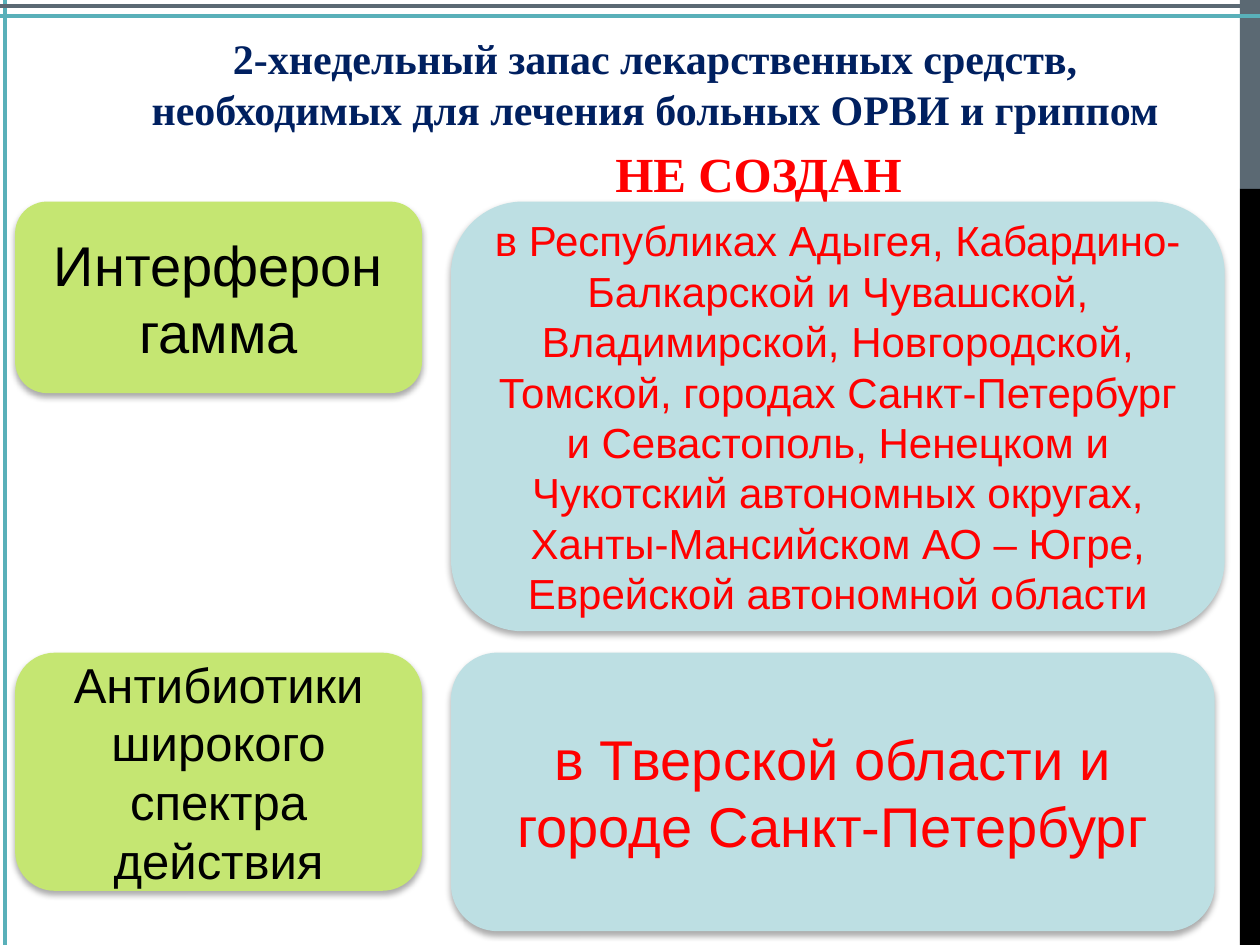
from lxml import etree
from pptx import Presentation
from pptx.dml.color import RGBColor
from pptx.enum.shapes import MSO_CONNECTOR, MSO_SHAPE
from pptx.enum.text import MSO_ANCHOR, MSO_AUTO_SIZE, PP_ALIGN
from pptx.oxml import parse_xml
from pptx.oxml.ns import nsdecls, qn
from pptx.util import Inches, Pt

RECTANGLE, ROUNDED = MSO_SHAPE.RECTANGLE, MSO_SHAPE.ROUNDED_RECTANGLE
STRAIGHT = MSO_CONNECTOR.STRAIGHT
TOP, MIDDLE = MSO_ANCHOR.TOP, MSO_ANCHOR.MIDDLE
CENTER = PP_ALIGN.CENTER
NO_AUTOFIT = MSO_AUTO_SIZE.NONE

WIDTH, HEIGHT = 10, 7.5
TEAL, SLATE, BLACK = "59B0B9", "5B6973", "000000"
GREEN, PALE_BLUE, RED, NAVY = "C5E672", "BDDFE3", "FF0000", "002060"
DRUG_LEFT, DRUG_WIDTH, REGION_LEFT = 0.12, 3.23, 3.58

ROWS = [
    (1.6, ("Интерферон гамма", 32, 1.52),
     ("в Республиках Адыгея, Кабардино-Балкарской и Чувашской, Владимирской, "
      "Новгородской, Томской, городах Санкт-Петербург и Севастополь, Ненецком и "
      "Чукотский автономных округах, Ханты-Мансийском АО – Югре, "
      "Еврейской автономной области", 24, 6.14, 3.41)),
    (5.18, ("Антибиотики широкого спектра действия", 28, 1.89),
     ("в Тверской области и городе Санкт-Петербург", 32, 6.06, 2.21)),
]


def color(value):
    """Turn a hex string into a colour."""
    return RGBColor.from_string(value)


def place(shape, box):
    """Move a shape to a box of left, top, width and height in inches."""
    shape.left, shape.top, shape.width, shape.height = map(Inches, box)


def format_paragraph(paragraph, font_name, size, value, bold=False):
    """Centre a paragraph and style its runs."""
    paragraph.alignment = CENTER
    for run in paragraph.runs:
        run.font.name, run.font.size, run.font.bold = font_name, Pt(size), bold
        run.font.color.rgb = color(value)


def add_filled_shape(slide, kind, box, fill):
    """Add a borderless shape of one colour without a shadow."""
    shape = slide.shapes.add_shape(kind, *map(Inches, box))
    shape.fill.solid()
    shape.fill.fore_color.rgb = color(fill)
    shape.line.fill.background()
    shape.shadow.inherit = False
    return shape


def add_soft_shadow(shape):
    """Put a soft shadow below a shape."""
    effects = shape._element.spPr.find(qn("a:effectLst"))
    effects.append(parse_xml(
        f'<a:outerShdw {nsdecls("a")} blurRad="{Pt(3.5)}" dist="{Pt(2.2)}" '
        'dir="5400000" rotWithShape="0"><a:srgbClr val="000000">'
        '<a:alpha val="32000"/></a:srgbClr></a:outerShdw>'))


def add_rule(slide, start, end, value):
    """Draw a straight rule between two points."""
    rule = slide.shapes.add_connector(STRAIGHT, *map(Inches, (*start, *end)))
    rule.line.color.rgb = color(value)
    rule.line.width = Pt(2.25)
    etree.SubElement(rule._element.spPr, qn("a:effectLst"))


def add_frame(slide, band_width):
    """Draw the right-hand band and the rules along the top and left edges."""
    left, split = WIDTH - band_width, HEIGHT / 5
    add_filled_shape(slide, RECTANGLE, (left, 0, band_width, split), SLATE)
    add_filled_shape(slide, RECTANGLE, (left, split, band_width, HEIGHT - split), BLACK)
    add_rule(slide, (0, 0.13), (WIDTH, 0.13), TEAL)
    add_rule(slide, (0.04, 0), (0.04, HEIGHT), TEAL)
    add_rule(slide, (0, 0.05), (WIDTH, 0.05), SLATE)


def fill_title(title, box):
    """Place the title and its red verdict, shifted to the right."""
    place(title, box)
    frame = title.text_frame
    frame.text = ("2-хнедельный запас лекарственных средств, "
                  "необходимых для лечения больных ОРВИ и гриппом\nНЕ СОЗДАН")
    frame.vertical_anchor, frame.auto_size = TOP, NO_AUTOFIT
    frame.word_wrap = True
    heading, verdict = frame.paragraphs
    format_paragraph(heading, "Times New Roman", 24, NAVY, bold=True)
    format_paragraph(verdict, "Times New Roman", 28, RED, bold=True)
    verdict.space_before = Pt(5.6)
    verdict._p.get_or_add_pPr().set("marL", str(Inches(1.64)))


def add_card(slide, box, text, size, fill, text_color):
    """Add a rounded card with centred text."""
    card = add_filled_shape(slide, ROUNDED, box, fill)
    add_soft_shadow(card)
    frame = card.text_frame
    frame.text = text
    frame.word_wrap, frame.vertical_anchor = True, MIDDLE
    format_paragraph(frame.paragraphs[0], "Arial", size, text_color)


def add_row(slide, top, drug, region):
    """Add a drug card and the card of regions that lack it."""
    drug_text, drug_size, drug_height = drug
    region_text, region_size, region_width, region_height = region
    add_card(slide, (DRUG_LEFT, top, DRUG_WIDTH, drug_height),
             drug_text, drug_size, GREEN, BLACK)
    add_card(slide, (REGION_LEFT, top, region_width, region_height),
             region_text, region_size, PALE_BLUE, RED)


def main():
    """Build and save the presentation."""
    presentation = Presentation()
    presentation.slide_width, presentation.slide_height = Inches(WIDTH), Inches(HEIGHT)
    slide = presentation.slides.add_slide(presentation.slide_layouts[5])
    add_frame(slide, 0.16)
    fill_title(slide.shapes.title, (0.75, 0.21, 8.9, 1.22))
    for top, drug, region in ROWS:
        add_row(slide, top, drug, region)
    presentation.save("out.pptx")


if __name__ == "__main__":
    main()
